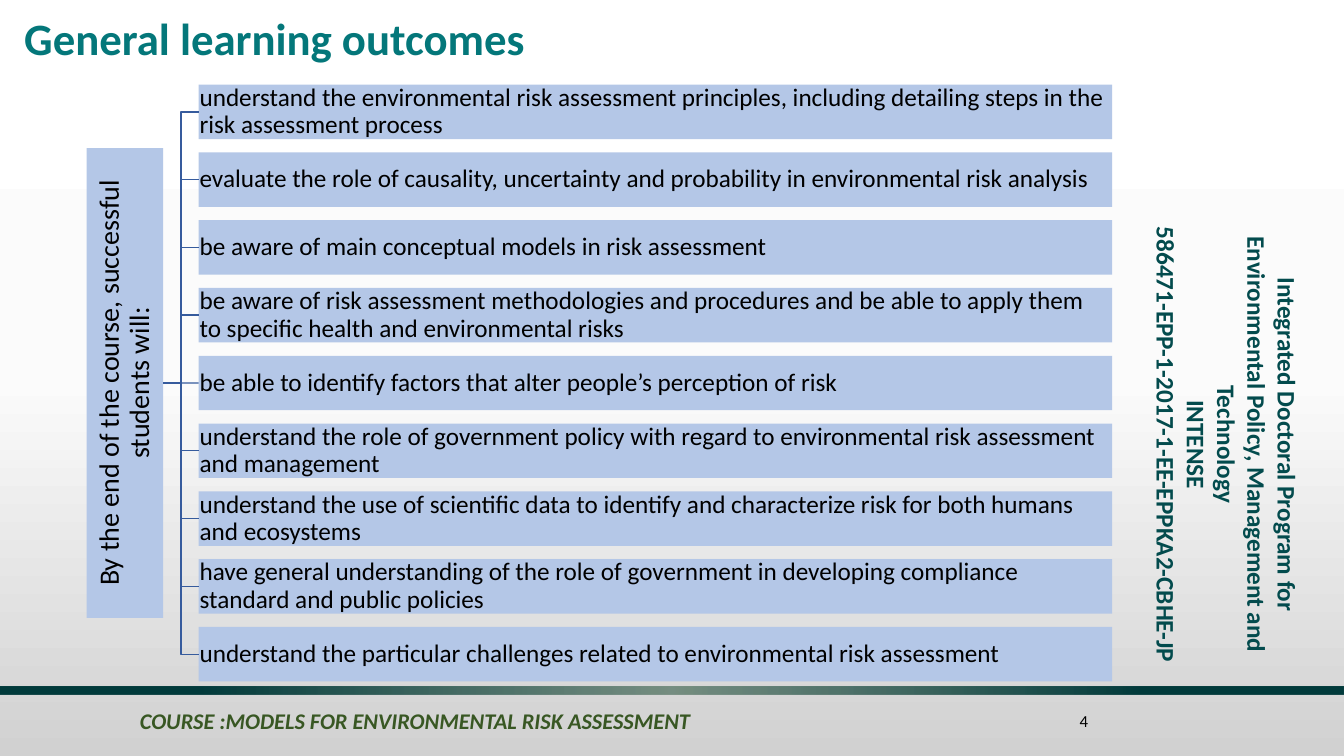
from lxml.etree import SubElement
from pptx import Presentation
from pptx.dml.color import RGBColor
from pptx.enum.shapes import MSO_CONNECTOR, MSO_SHAPE
from pptx.enum.text import MSO_ANCHOR, MSO_AUTO_SIZE, PP_ALIGN
from pptx.oxml.ns import qn
from pptx.util import Inches, Pt

FONT = "Calibri"
BLACK = RGBColor(0x00, 0x00, 0x00)
WHITE = RGBColor(0xFF, 0xFF, 0xFF)
OFF_WHITE = RGBColor(0xFB, 0xFB, 0xFB)
GREY = RGBColor(0xD1, 0xD1, 0xD1)
TEAL = RGBColor(0x04, 0x77, 0x7A)
DARK_TEAL = RGBColor(0x03, 0x4B, 0x4D)
BAND_EDGE = RGBColor(0x02, 0x3B, 0x3C)
BAND_CENTRE = RGBColor(0x66, 0x82, 0x73)
FOOTER_GREEN = RGBColor(0x38, 0x57, 0x23)
BOX_BLUE = RGBColor(0xB4, 0xC7, 0xE7)
BRANCH_BLUE = RGBColor(0x36, 0x5B, 0x9D)

PROGRAM = (
    "Integrated Doctoral Program for Environmental Policy, Management and Technology\n"
    "INTENSE\n"
    "586471-EPP-1-2017-1-EE-EPPKA2-CBHE-JP"
)
OUTCOMES = [
    "understand the environmental risk assessment principles, including detailing steps in the risk assessment process",
    "evaluate the role of causality, uncertainty and probability in environmental risk analysis",
    "be aware of main conceptual models in risk assessment",
    "be aware of risk assessment methodologies and procedures and be able to apply them to specific health and environmental risks",
    "be able to identify factors that alter people’s perception of risk",
    "understand the role of government policy with regard to environmental risk assessment and management",
    "understand the use of scientific data to identify and characterize risk for both humans and ecosystems",
    "have general understanding of the role of government in developing compliance standard and public policies",
    "understand the particular challenges related to environmental risk assessment",
]

ROW_TOP, ROW_STEP, ROW_HEIGHT = 0.84, 0.6725, 0.54
HEADER_HEIGHT = 4.66


def format_text(frame, size, color, align=PP_ALIGN.LEFT, bold=False, italic=False, spacing=1.0):
    frame.word_wrap = True
    for paragraph in frame.paragraphs:
        paragraph.alignment = align
        paragraph.line_spacing = spacing
        paragraph.space_before = Pt(0)
        for run in paragraph.runs:
            run.font.name = FONT
            run.font.size = Pt(size)
            run.font.color.rgb = color
            run.font.bold = bold
            run.font.italic = italic


def set_gradient(fill, owner, stops):
    """Give fill the (position %, colour, opacity %) stops and return its gradient element."""
    fill.gradient()
    gradient = next(owner.iter(qn("a:gradFill")))
    stop_list = gradient.find(qn("a:gsLst"))
    stop_list.clear()
    for position, color, opacity in stops:
        stop = SubElement(stop_list, qn("a:gs"), pos=str(position * 1000))
        stop_color = SubElement(stop, qn("a:srgbClr"), val=str(color))
        if opacity < 100:
            SubElement(stop_color, qn("a:alpha"), val=str(opacity * 1000))
    return gradient


def set_background(slide):
    fill = slide.background.fill
    set_gradient(fill, slide.element, [(0, WHITE, 100), (50, OFF_WHITE, 100), (100, GREY, 100)])
    fill.gradient_angle = 270


def add_band(slide):
    band = slide.shapes.add_shape(
        MSO_SHAPE.RECTANGLE, Inches(0), Inches(6.81), Inches(13.33), Inches(0.08))
    band.shadow.inherit = False
    band.line.fill.background()
    gradient = set_gradient(
        band.fill, band.element, [(0, BAND_CENTRE, 85), (70, BAND_EDGE, 100)])
    gradient.remove(gradient.find(qn("a:lin")))
    radial = SubElement(gradient, qn("a:path"), path="circle")
    SubElement(radial, qn("a:fillToRect"), l="50000", t="50000", r="50000", b="50000")


def add_label(slide, text, left, top, width, height, anchor=MSO_ANCHOR.MIDDLE, **style):
    label = slide.shapes.add_textbox(Inches(left), Inches(top), Inches(width), Inches(height))
    label.text_frame.text = text
    label.text_frame.vertical_anchor = anchor
    format_text(label.text_frame, **style)
    return label


def add_box(slide, text, left, top, width, height, **style):
    box = slide.shapes.add_shape(
        MSO_SHAPE.RECTANGLE, Inches(left), Inches(top), Inches(width), Inches(height))
    box.shadow.inherit = False
    box.fill.solid()
    box.fill.fore_color.rgb = BOX_BLUE
    box.line.fill.background()
    frame = box.text_frame
    frame.margin_left = frame.margin_right = Inches(0.01)
    frame.margin_top = frame.margin_bottom = Inches(0.01)
    frame.vertical_anchor = MSO_ANCHOR.MIDDLE
    frame.text = text
    format_text(frame, color=BLACK, spacing=0.9, **style)
    return box


def add_branch(slide, header, outcome, kind):
    branch = slide.shapes.add_connector(kind, 0, 0, 0, 0)
    branch.begin_connect(header, 3)
    branch.end_connect(outcome, 1)
    branch.line.color.rgb = BRANCH_BLUE
    branch.line.width = Pt(1)
    SubElement(branch.element.spPr, qn("a:effectLst"))


def add_outcome_tree(slide):
    middle = len(OUTCOMES) // 2
    centre = ROW_TOP + middle * ROW_STEP + ROW_HEIGHT / 2
    header = add_box(
        slide, "By the end of the course, successful students will:",
        0.86, centre - HEADER_HEIGHT / 2, 0.76, HEADER_HEIGHT, size=20, align=PP_ALIGN.CENTER)
    header.text_frame._txBody.bodyPr.set("vert", "vert270")
    for row, text in enumerate(OUTCOMES):
        outcome = add_box(
            slide, text, 1.97, ROW_TOP + row * ROW_STEP, 9.06, ROW_HEIGHT, size=18)
        kind = MSO_CONNECTOR.STRAIGHT if row == middle else MSO_CONNECTOR.ELBOW
        add_branch(slide, header, outcome, kind)


def set_title(slide, text):
    title = slide.shapes.title
    title.left, title.top = Inches(0.14), Inches(0.04)
    title.width, title.height = Inches(9.91), Inches(0.66)
    frame = title.text_frame
    frame.text = text
    frame.auto_size = MSO_AUTO_SIZE.NONE
    frame.vertical_anchor = MSO_ANCHOR.BOTTOM
    format_text(frame, 32, TEAL, bold=True, spacing=0.9)


def main():
    deck = Presentation()
    deck.slide_width, deck.slide_height = Inches(13.33), Inches(7.5)
    slide = deck.slides.add_slide(deck.slide_layouts[5])
    set_background(slide)
    add_band(slide)
    program = add_label(slide, PROGRAM, 9.75, 3.6, 4.82, 1.62, anchor=MSO_ANCHOR.TOP,
                        size=18, color=DARK_TEAL, align=PP_ALIGN.CENTER, bold=True)
    program.rotation = 90
    set_title(slide, "General learning outcomes")
    add_label(slide, "4", 10.21, 6.95, 0.68, 0.4, size=12, color=BLACK, align=PP_ALIGN.RIGHT)
    add_label(slide, "COURSE :MODELS FOR ENVIRONMENTAL RISK ASSESSMENT", 1.29, 6.89, 11.07, 0.51,
              size=16, color=FOOTER_GREEN, bold=True, italic=True)
    add_outcome_tree(slide)
    deck.save("out.pptx")


if __name__ == "__main__":
    main()
